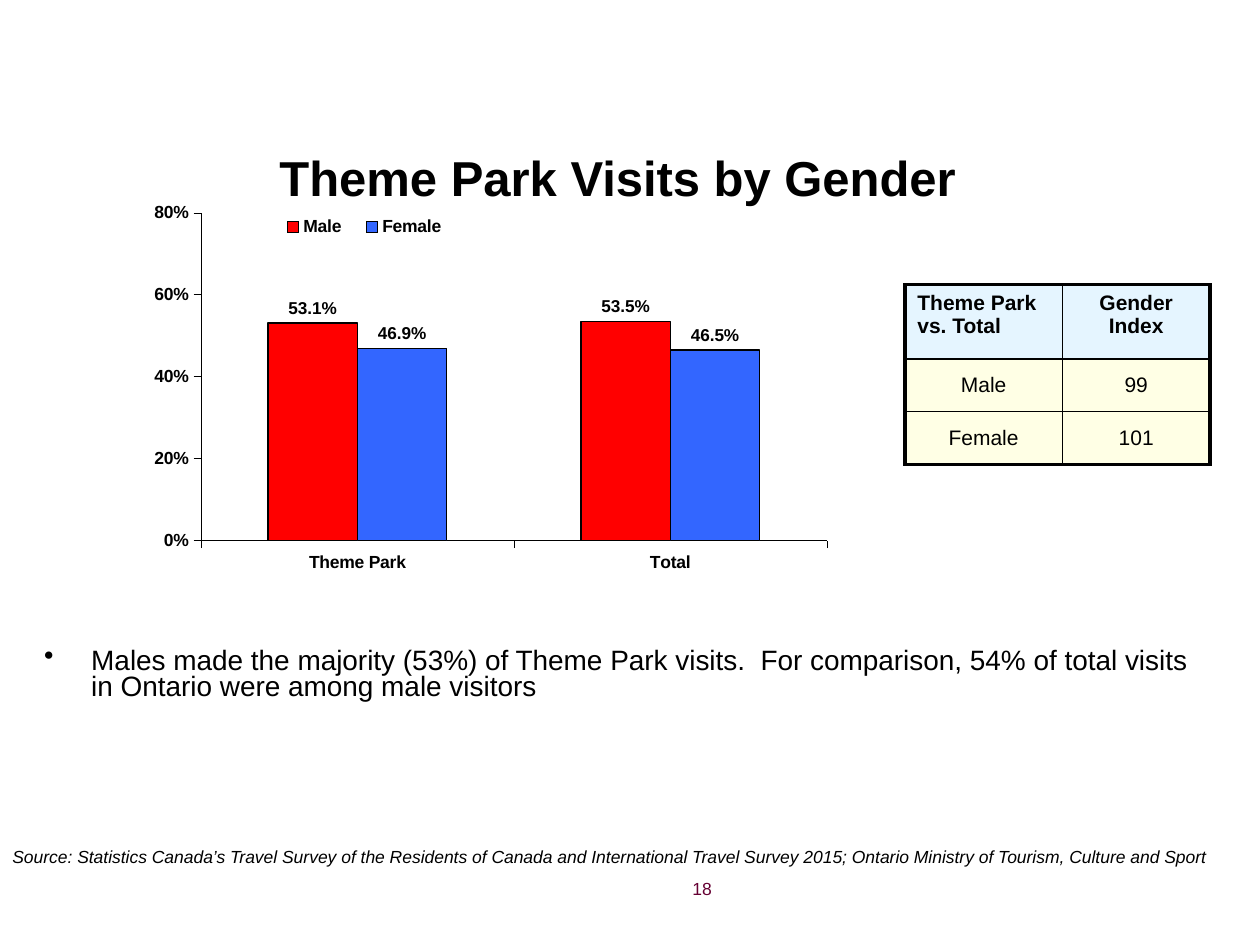
from dataclasses import dataclass

from lxml import etree
from pptx import Presentation
from pptx.chart.data import CategoryChartData
from pptx.dml.color import RGBColor
from pptx.enum.chart import XL_CHART_TYPE as ChartType
from pptx.enum.chart import XL_LABEL_POSITION as LabelPosition
from pptx.enum.chart import XL_LEGEND_POSITION as LegendPosition
from pptx.enum.chart import XL_TICK_MARK as TickMark
from pptx.enum.text import MSO_ANCHOR as Anchor
from pptx.enum.text import PP_ALIGN as Align
from pptx.oxml import parse_xml
from pptx.oxml.ns import nsdecls, qn
from pptx.slide import Slide
from pptx.util import Cm, Pt

BLACK = RGBColor(0x00, 0x00, 0x00)
PLUM = RGBColor(0x66, 0x00, 0x33)
RED = RGBColor(0xFF, 0x00, 0x00)
BLUE = RGBColor(0x33, 0x66, 0xFF)
PALE_BLUE = RGBColor(0xE5, 0xF5, 0xFF)
PALE_YELLOW = RGBColor(0xFF, 0xFF, 0xE5)


def set_font(font, size, color=BLACK, bold=False, italic=False, name="Arial"):
    font.name, font.size = name, Pt(size)
    font.bold, font.italic = bold, italic
    font.color.rgb = color


def write(frame, text, align=Align.LEFT, bullet=None, indent=0, spacing=None, **font):
    """Fill a text frame with one paragraph; indent is a hanging indent in cm."""
    frame.word_wrap = True
    paragraph = frame.paragraphs[0]
    paragraph.text = text
    paragraph.alignment = align
    if spacing:
        paragraph.line_spacing = spacing
    if bullet:
        properties = paragraph._p.get_or_add_pPr()
        properties.set("marL", str(Cm(indent)))
        properties.set("indent", str(-Cm(indent)))
        etree.SubElement(properties, qn("a:buChar")).set("char", bullet)
    set_font(paragraph.runs[0].font, **font)


def place_in_chart(element, index, inner=False, **fractions):
    """Give a chart part a manual layout in fractions of the chart area."""
    for old in element.findall(qn("c:layout")):
        element.remove(old)
    target = '<c:layoutTarget val="inner"/>' if inner else ""
    modes = '<c:xMode val="edge"/><c:yMode val="edge"/>'
    sizes = "".join(f'<c:{key} val="{value}"/>' for key, value in fractions.items())
    element.insert(index, parse_xml(
        f'<c:layout {nsdecls("c")}><c:manualLayout>{target}{modes}{sizes}'
        "</c:manualLayout></c:layout>"))


def set_border(cell, side, width):
    cell._tc.get_or_add_tcPr().append(parse_xml(
        f'<a:ln{side} {nsdecls("a")} w="{Pt(width)}"><a:solidFill>'
        f'<a:srgbClr val="{BLACK}"/></a:solidFill></a:ln{side}>'))


@dataclass
class Page:
    slide: Slide
    outer_line: float = 2.25
    inner_line: float = 1
    chart_size: float = 10

    def title(self, text, left, top, width, height):
        heading = self.slide.shapes.title
        heading.left, heading.top = Cm(left), Cm(top)
        heading.width, heading.height = Cm(width), Cm(height)
        heading.text_frame.vertical_anchor = Anchor.TOP
        heading.text_frame.margin_top = Cm(0.23)
        write(heading.text_frame, text, align=Align.CENTER, size=28, bold=True)

    def text(self, text, left, top, width, height, **style):
        box = self.slide.shapes.add_textbox(Cm(left), Cm(top), Cm(width), Cm(height))
        write(box.text_frame, text, **style)

    def table(self, rows, left, top, widths, heights):
        table = self.slide.shapes.add_table(
            len(rows), len(widths), Cm(left), Cm(top),
            Cm(sum(widths)), Cm(sum(heights))).table
        table.horz_banding = False
        for column, width in zip(table.columns, widths):
            column.width = Cm(width)
        for row, height in zip(table.rows, heights):
            row.height = Cm(height)
        last_row, last_column = len(rows) - 1, len(widths) - 1
        for r, row in enumerate(rows):
            for c, text in enumerate(row):
                cell = table.cell(r, c)
                header = r == 0
                edges = {"L": c == 0, "R": c == last_column,
                         "T": header, "B": r == last_row}
                for side, outer in edges.items():
                    set_border(cell, side, self.outer_line if outer else self.inner_line)
                cell.fill.solid()
                cell.fill.fore_color.rgb = PALE_BLUE if header else PALE_YELLOW
                if not header:
                    cell.vertical_anchor = Anchor.MIDDLE
                    cell.margin_left = cell.margin_right = 0
                    cell.margin_top = cell.margin_bottom = 0
                align = Align.LEFT if header and c == 0 else Align.CENTER
                write(cell.text_frame, text, align=align, size=12, bold=header)

    def column_chart(self, categories, series, left, top, width, height):
        """Draw clustered columns; series maps a name to its values and colour."""
        data = CategoryChartData(number_format="0.0%")
        data.categories = categories
        for name, (values, _) in series.items():
            data.add_series(name, values)
        chart = self.slide.shapes.add_chart(
            ChartType.COLUMN_CLUSTERED, Cm(left), Cm(top),
            Cm(width), Cm(height), data).chart
        chart.has_title = False
        set_font(chart.font, self.chart_size, bold=True)

        plot = chart.plots[0]
        plot.gap_width, plot.overlap, plot.vary_by_categories = 150, 0, False
        for columns, (_, color) in zip(plot.series, series.values()):
            columns.format.fill.solid()
            columns.format.fill.fore_color.rgb = color
            columns.format.line.color.rgb = BLACK
            columns.format.line.width = Pt(0.75)
            labels = columns.data_labels
            labels.show_value = True
            labels.number_format, labels.number_format_is_linked = "0.0%", False
            labels.position = LabelPosition.OUTSIDE_END
            set_font(labels.font, 9.8, bold=True)

        for axis in (chart.category_axis, chart.value_axis):
            axis.has_major_gridlines = False
            axis.major_tick_mark = TickMark.OUTSIDE
            axis.format.line.color.rgb = BLACK
            axis.format.line.width = Pt(0.19)
            set_font(axis.tick_labels.font, self.chart_size, bold=True)
        scale = chart.value_axis
        scale.minimum_scale, scale.maximum_scale, scale.major_unit = 0, 0.8, 0.2
        scale.tick_labels.number_format = "0%"
        scale.tick_labels.number_format_is_linked = False

        chart.has_legend = True
        chart.legend.position = LegendPosition.TOP
        chart.legend.include_in_layout = False
        set_font(chart.legend.font, self.chart_size, bold=True)
        place_in_chart(chart.legend._element, 1, x=0.17, y=0.05, w=0.2, h=0.06)
        place_in_chart(chart._chartSpace.chart.plotArea, 0, inner=True,
                       x=0.1, y=0.05, w=0.65, h=0.69)


def main():
    deck = Presentation()
    deck.slide_width, deck.slide_height = Cm(25.4), Cm(19.05)
    page = Page(deck.slides.add_slide(deck.slide_layouts[5]))

    page.title("Theme Park Visits by Gender", 1.02, 2.74, 22.86, 1.9)
    page.column_chart(
        ["Theme Park", "Total"],
        {"Male": ((0.531, 0.535), RED), "Female": ((0.469, 0.465), BLUE)},
        2.11, 3.81, 19.41, 9.58)
    page.table(
        [["Theme Park vs. Total", "Gender Index"], ["Male", "99"], ["Female", "101"]],
        18.24, 5.74, widths=[3.18, 2.97], heights=[1.5, 1.06, 1.06])
    page.text(
        "Males made the majority (53%) of Theme Park visits.  For comparison, "
        "54% of total visits in Ontario were among male visitors",
        0.64, 12.95, 24.13, 4.24, bullet="•", indent=0.95, spacing=0.8, size=16)
    page.text(
        "Source: Statistics Canada’s Travel Survey of the Residents of Canada and "
        "International Travel Survey 2015; Ontario Ministry of Tourism, Culture and Sport",
        0, 16.94, 24.89, 0.69, size=10, italic=True)
    page.text("18", 12.9, 17.58, 1.7, 0.89, align=Align.RIGHT, size=10, color=PLUM)
    deck.save("out.pptx")


if __name__ == "__main__":
    main()
